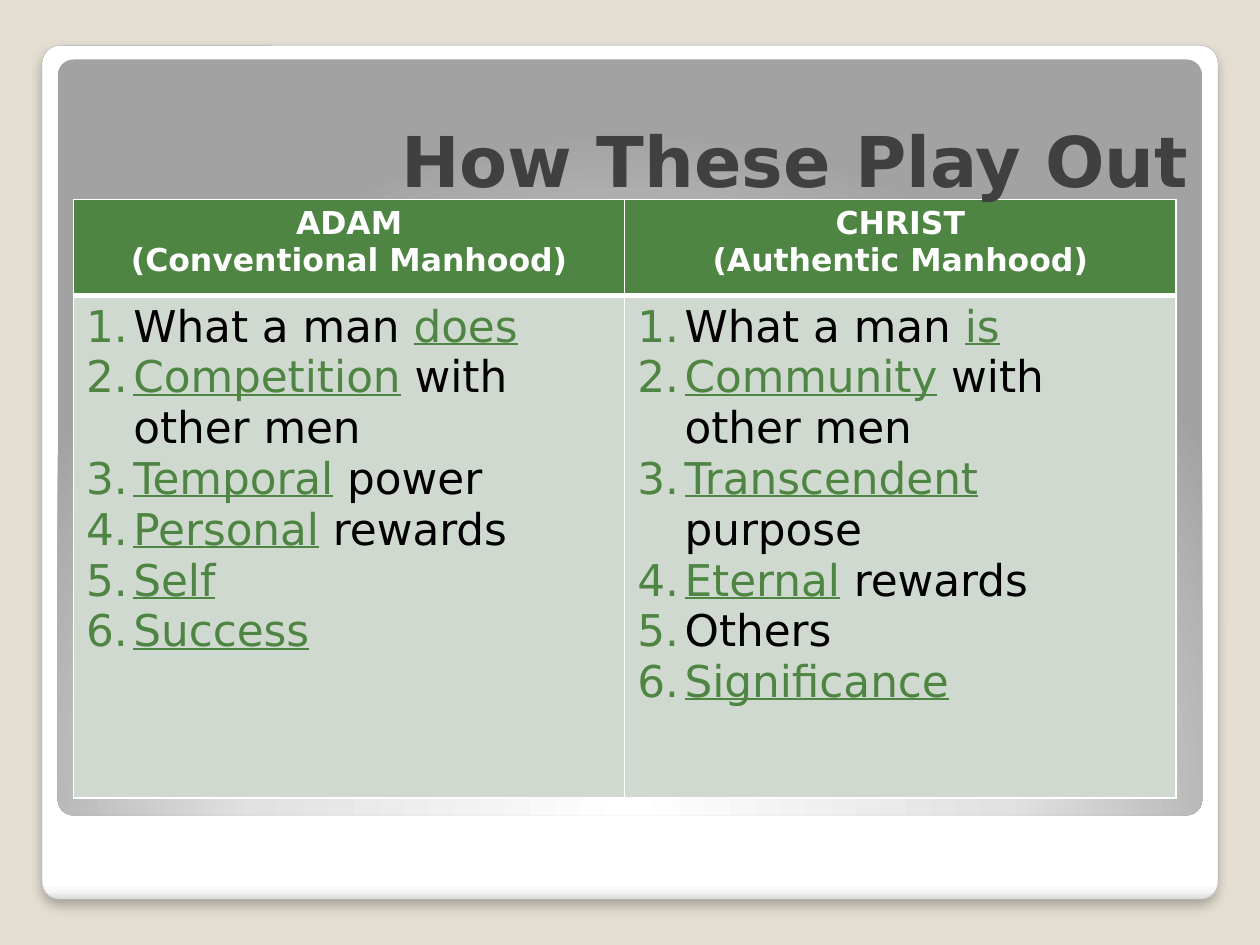
"""Builds the slide "How These Play Out", a two-column comparison table."""
from lxml import etree
from pptx import Presentation, util as u
from pptx.dml.color import RGBColor
from pptx.enum import shapes, text
from pptx.oxml import parse_xml
from pptx.oxml.ns import nsdecls, qn

FONT = "DejaVu Sans"
GREEN = "4E8542"
BLACK = "000000"
WHITE = "FFFFFF"
NS = nsdecls("a")


def paint(fill, color):
    fill.solid()
    fill.fore_color.rgb = RGBColor.from_string(color)


def add_run(p, words, size, color, bold=False, underline=False):
    r = p.add_run()
    r.text = words
    r.font.name = FONT
    r.font.size = u.Pt(size)
    r.font.bold = bold
    if underline:
        r.font.underline = True
    paint(r.font.fill, color)


prs = Presentation()
prs.slide_width, prs.slide_height = u.Pt(720), u.Pt(540)
s = prs.slides.add_slide(prs.slide_layouts[5])
paint(s.background.fill, "E3DED1")

panels = [
    ((24, 26, 672, 488), [(0, WHITE), (98, WHITE), (99, "F7F7F7"), (100, "DADADA")],
     '<a:lin ang="5400000" scaled="0"/>'),
    ((33, 34, 654, 432), [(0, WHITE), (55, "E1E1E1"), (100, "A2A2A2")],
     '<a:path path="circle"><a:fillToRect l="50000" t="175000" r="50000" b="-75000"/></a:path>'),
]
frames = []
for box, stops, direction in panels:
    sp = s.shapes.add_shape(shapes.MSO_SHAPE.ROUNDED_RECTANGLE, *[u.Pt(v) for v in box])
    sp.adjustments[0] = 0.021
    sp.shadow.inherit = False
    sp.line.fill.background()
    gs = "".join(f'<a:gs pos="{pos * 1000}"><a:srgbClr val="{c}"/></a:gs>' for pos, c in stops)
    sp.element.spPr.insert(2, parse_xml(
        f'<a:gradFill {NS} rotWithShape="1"><a:gsLst>{gs}</a:gsLst>{direction}</a:gradFill>'))
    frames.append(sp)

outer = frames[0]
paint(outer.line.fill, "A4A4A4")
outer.line.width = u.Pt(0.16)
outer.element.spPr.find(qn("a:effectLst")).append(parse_xml(
    f'<a:outerShdw {NS} blurRad="{u.Pt(6)}" dist="{u.Pt(4)}" dir="5400000" algn="t" rotWithShape="0">'
    '<a:srgbClr val="000000"><a:alpha val="25000"/></a:srgbClr></a:outerShdw>'))

columns = [
    (["ADAM", "(Conventional Manhood)"],
     [[("What a man ", False), ("does", True)],
      [("Competition", True), (" with other men", False)],
      [("Temporal", True), (" power", False)],
      [("Personal", True), (" rewards", False)],
      [("Self", True)],
      [("Success", True)]]),
    (["CHRIST", "(Authentic Manhood)"],
     [[("What a man ", False), ("is", True)],
      [("Community", True), (" with other men", False)],
      [("Transcendent", True), (" purpose", False)],
      [("Eternal", True), (" rewards", False)],
      [("Others", False)],
      [("Significance", True)]]),
]
table = s.shapes.add_table(2, 2, u.Pt(42), u.Pt(114), u.Pt(630), u.Pt(342)).table
table.rows[0].height, table.rows[1].height = u.Pt(54.75), u.Pt(287.25)

for col, (heading, items) in enumerate(columns):
    head, body = table.cell(0, col), table.cell(1, col)
    for i, line in enumerate(heading):
        tf = head.text_frame
        p = tf.add_paragraph() if i else tf.paragraphs[0]
        p.alignment = text.PP_ALIGN.CENTER
        add_run(p, line, 18, WHITE, bold=True)
    for i, item in enumerate(items):
        tf = body.text_frame
        p = tf.add_paragraph() if i else tf.paragraphs[0]
        pPr = p._p.get_or_add_pPr()
        pPr.set("marL", str(u.Pt(27)))
        pPr.set("indent", str(u.Pt(-27)))
        color = etree.SubElement(pPr, qn("a:buClr"))
        etree.SubElement(color, qn("a:srgbClr"), val=GREEN)
        etree.SubElement(pPr, qn("a:buAutoNum"), type="arabicPeriod")
        for words, key in item:
            add_run(p, words, 25, GREEN if key else BLACK, underline=key)
    for cell, color, thick in ((head, GREEN, "B"), (body, "D0D9CF", "T")):
        paint(cell.fill, color)
        for i, side in enumerate("LRTB"):
            width = u.Pt(3 if side == thick else 1)
            cell._tc.get_or_add_tcPr().insert(i, parse_xml(
                f'<a:ln{side} {NS} w="{width}"><a:solidFill><a:srgbClr val="{WHITE}"/>'
                f'</a:solidFill></a:ln{side}>'))

title = s.shapes.title
title.left, title.top, title.width, title.height = u.Pt(42), u.Pt(36), u.Pt(644), u.Pt(83)
title.element.getparent().append(title.element)
tf = title.text_frame
tf.word_wrap = True
tf.auto_size = text.MSO_AUTO_SIZE.NONE
tf.vertical_anchor = text.MSO_ANCHOR.BOTTOM
p = tf.paragraphs[0]
p.alignment = text.PP_ALIGN.RIGHT
add_run(p, "How These Play Out", 40, "404040", bold=True)

prs.save("out.pptx")
